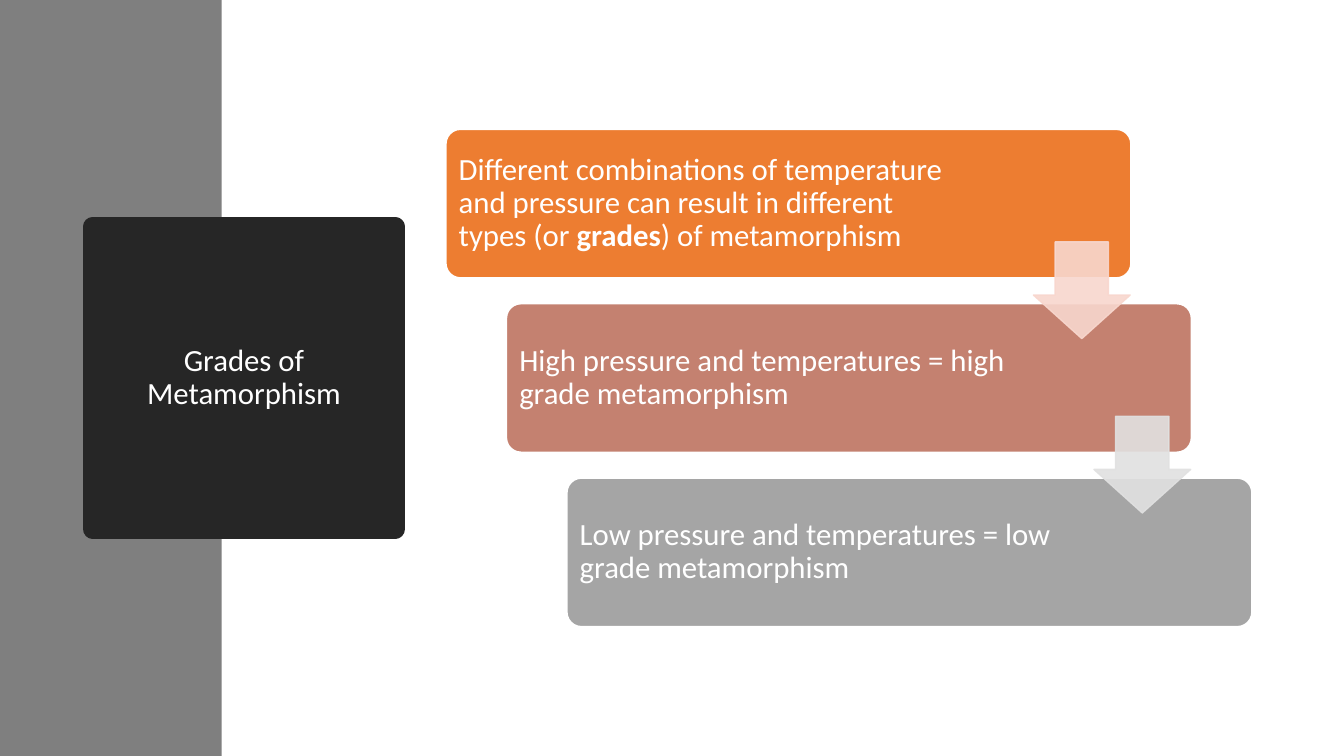
from lxml import etree
from pptx import Presentation
from pptx import util as u
from pptx.dml.color import RGBColor
from pptx.enum import shapes, text
from pptx.oxml.ns import qn

TITLE = "Grades of Metamorphism"
# Runs are (wording, bold); the last value is the width of the text
CARDS = [
    ("orange", [("Different combinations of temperature and pressure can result in different types (or ", False),
                ("grades", True), (") of metamorphism", False)], 5.2),
    ("clay", [("High pressure and temperatures = high grade metamorphism", False)], 5.15),
    ("grey", [("Low pressure and temperatures = low grade metamorphism", False)], 5.15),
]
ARROWS = ["pale clay", "pale grey"]
COLOURS = {
    "white": "FFFFFF", "band": "7F7F7F", "black": "262626",
    "orange": "ED7D31", "clay": "C48170", "grey": "A5A5A5",
    "pale clay": "F8D7CE", "pale grey": "E1E1E1",
}
FONT = {"name": "Calibri", "size": u.Pt(22)}

WIDTH, HEIGHT = 13.33, 7.5
BAND_WIDTH = 2.2
TITLE_LEFT, TITLE_SIDE = 0.92, 3
CARD_LEFT, CARD_TOP, CARD_WIDTH, CARD_HEIGHT = 4.42, 1.28, 6.8, 1.48
STEP_X, STEP_Y = 0.6, 1.73
CARD_PAD, TEXT_INSET = 0.04, 0.09
ARROW_LEFT, ARROW_TOP, ARROW_SIDE = 10.25, 2.4, 0.96


def colour(name):
    return RGBColor.from_string(COLOURS[name])


def add_block(slide, kind, place, fill, line=None, points=0, adjust=()):
    block = slide.shapes.add_shape(kind, *map(u.Inches, place))
    block.shadow.inherit = False
    block.fill.solid()
    block.fill.fore_color.rgb = colour(fill)
    if line:
        block.line.color.rgb = colour(line)
        block.line.width = u.Pt(points)
    else:
        block.line.fill.background()
    for index, value in enumerate(adjust):
        block.adjustments[index] = value
    return block


def write(box, runs, align, inset=None):
    frame = box.text_frame
    frame.word_wrap = True
    frame.vertical_anchor = text.MSO_ANCHOR.MIDDLE
    if inset is not None:
        for side in ("left", "top", "right", "bottom"):
            setattr(frame, f"margin_{side}", u.Inches(inset))
    para = frame.paragraphs[0]
    para.alignment = align
    para.line_spacing = 0.9
    for words, bold in runs:
        span = para.add_run()
        span.text = words
        for key, value in {**FONT, "bold": bold}.items():
            setattr(span.font, key, value)
        span.font.color.rgb = colour("white")


def set_opacity(block, percent):
    """Apply the opacity to both the fill and the outline."""
    for tint in block.element.spPr.iter(qn("a:srgbClr")):
        etree.SubElement(tint, qn("a:alpha"), val=str(percent * 1000))


def main():
    deck = Presentation()
    deck.slide_width, deck.slide_height = u.Inches(WIDTH), u.Inches(HEIGHT)
    slide = deck.slides.add_slide(deck.slide_layouts[6])
    kinds = shapes.MSO_SHAPE

    add_block(slide, kinds.RECTANGLE, (0, 0, BAND_WIDTH, HEIGHT), "band")
    title_place = (TITLE_LEFT, (HEIGHT - TITLE_SIDE) / 2, TITLE_SIDE, TITLE_SIDE)
    title = add_block(slide, kinds.RECTANGLE, title_place, "black", "black", 13.75)
    etree.SubElement(title.element.spPr.find(qn("a:ln")), qn("a:round"))
    write(title, [(TITLE, False)], text.PP_ALIGN.CENTER)

    for step, (fill, runs, text_width) in enumerate(CARDS):
        left, top = CARD_LEFT + step * STEP_X, CARD_TOP + step * STEP_Y
        add_block(slide, kinds.ROUNDED_RECTANGLE, (left, top, CARD_WIDTH, CARD_HEIGHT),
                  fill, "white", 1.5, [0.1])
        place = (left + CARD_PAD, top + CARD_PAD, text_width, CARD_HEIGHT - 2 * CARD_PAD)
        box = slide.shapes.add_textbox(*map(u.Inches, place))
        write(box, runs, text.PP_ALIGN.LEFT, TEXT_INSET)

    for step, fill in enumerate(ARROWS):
        place = (ARROW_LEFT + step * STEP_X, ARROW_TOP + step * STEP_Y, ARROW_SIDE, ARROW_SIDE)
        arrow = add_block(slide, kinds.DOWN_ARROW, place, fill, fill, 1, [0.55, 0.45])
        set_opacity(arrow, 90)

    deck.save("out.pptx")


if __name__ == "__main__":
    main()
